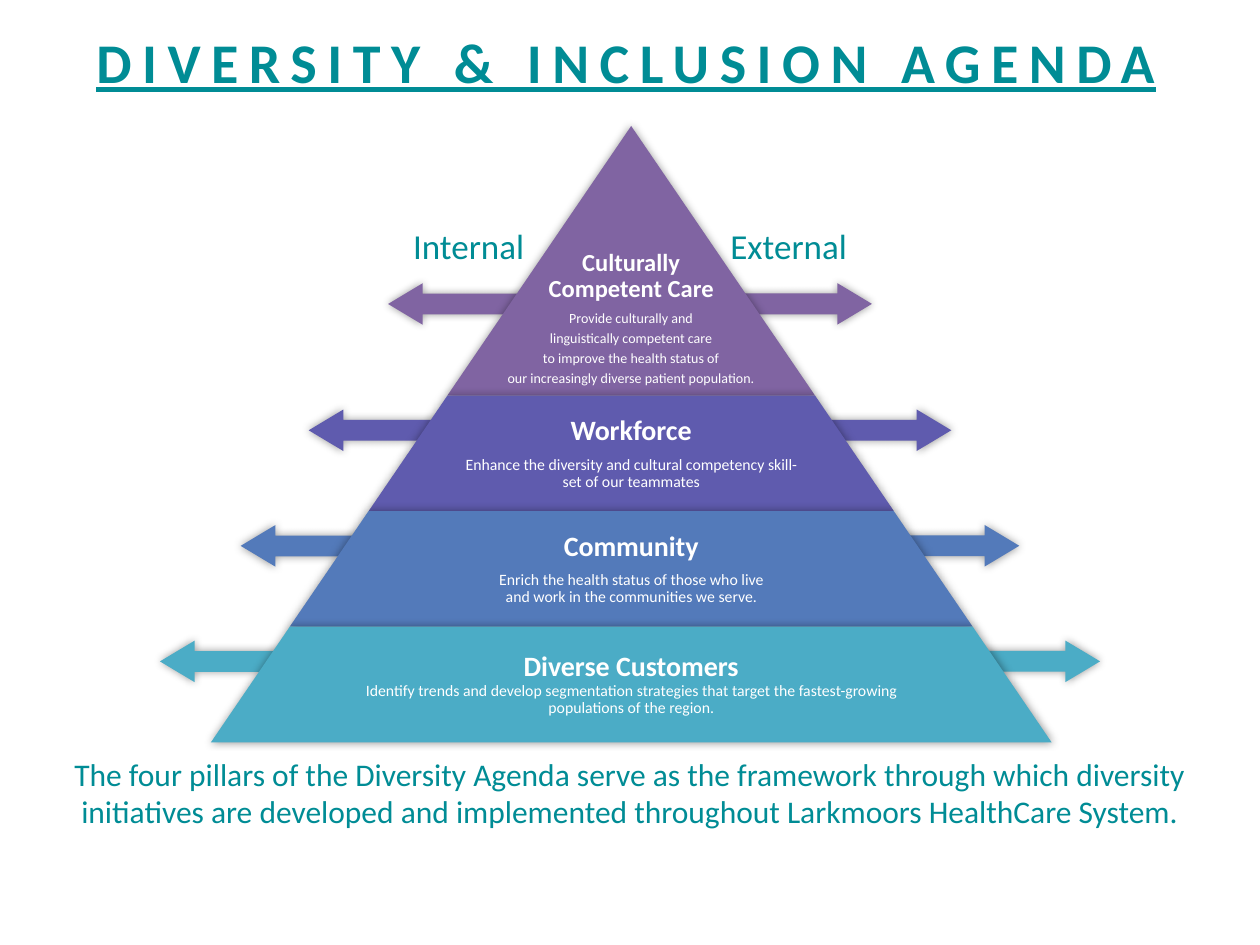
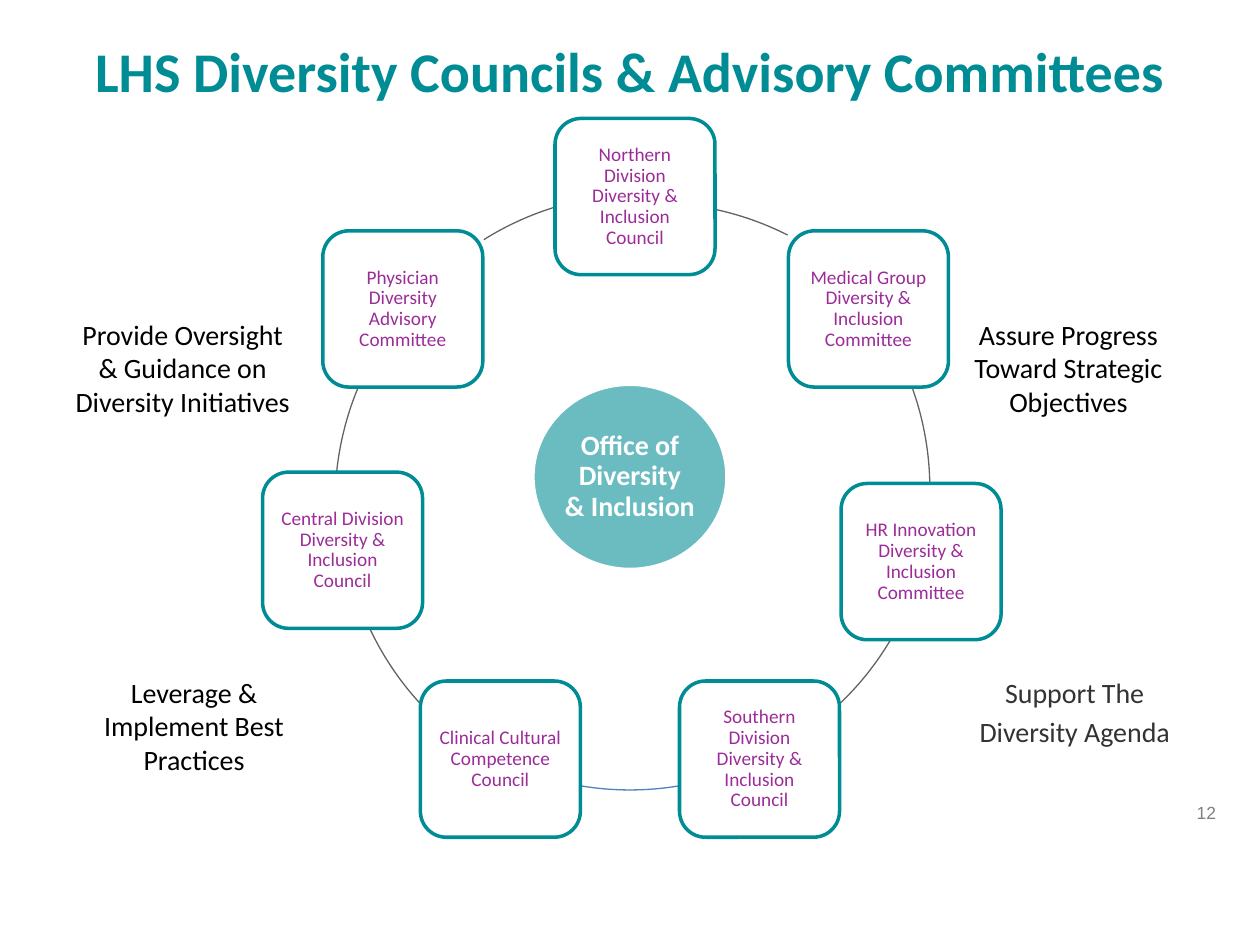
from copy import deepcopy
from dataclasses import dataclass
from math import cos, pi, sin

from lxml.etree import SubElement
from pptx import Presentation
from pptx.dml.color import RGBColor
from pptx.enum.shapes import MSO_SHAPE
from pptx.enum.text import MSO_ANCHOR, MSO_AUTO_SIZE, PP_ALIGN
from pptx.oxml.ns import qn
from pptx.util import Inches, Pt


@dataclass(frozen=True)
class Theme:
    font: str = "Calibri"
    number_font: str = "Arial"
    teal: str = "008C95"
    plum: str = "9B2C98"
    white: str = "FFFFFF"
    black: str = "000000"
    charcoal: str = "333333"
    gray: str = "808080"
    ring: str = "636363"
    ring_accent: str = "4F81BD"
    title: int = 32
    label: int = 20
    caption: int = 18
    heading: int = 16
    top_heading: int = 14
    card: int = 11
    detail: int = 9
    top_detail: int = 8
    number: int = 10


THEME = Theme()
WIDTH, HEIGHT = 10, 7.5
MIDDLE = WIDTH / 2

# Content: pyramid tiers, from the top down
# colour, height, arrow reach from the centre, arrow level as share of height,
# share of width for the text, heading, heading size, details, detail size
AGENDA_TITLE = "DIVERSITY & INCLUSION AGENDA"
LOW_TIER = 0.917
TIERS = [
    ("8064A2", 2.14, 1.92, 0.66, 1, "Culturally\nCompetent Care", THEME.top_heading,
     ["Provide culturally and", "linguistically competent care",
      "to improve the health status of",
      "our increasingly diverse patient population."], THEME.top_detail),
    ("5F5BAE", LOW_TIER, 2.55, 0.3, 0.65, "Workforce", THEME.heading,
     ["Enhance the diversity and cultural competency skill-set of our teammates"],
     THEME.detail),
    ("537ABA", LOW_TIER, 3.09, 0.3, 0.65, "Community", THEME.heading,
     ["Enrich the health status of those who live\nand work in the communities we serve."],
     THEME.detail),
    ("4BACC6", LOW_TIER, 3.73, 0.3, 0.65, "Diverse Customers", THEME.heading,
     ["Identify trends and develop segmentation strategies that target "
      "the fastest-growing populations of the region."], THEME.detail),
]
SIDES = [("Internal", -1), ("External", 1)]
CAPTION = ("The four pillars of the Diversity Agenda serve as the framework through which "
           "diversity\ninitiatives are developed and implemented throughout "
           "Larkmoors HealthCare System.")

# Content: councils clockwise from the top, with their shift from the even ring
COUNCIL_TITLE = "LHS Diversity Councils & Advisory Committees"
COUNCILS = [
    ("Northern Division Diversity & Inclusion Council", 0.04, 0.04),
    ("Medical Group Diversity & Inclusion Committee", 0.04, 0.04),
    ("HR Innovation Diversity & Inclusion Committee", 0, 0.04),
    ("Southern Division Diversity & Inclusion Council", 0, 0),
    ("Clinical Cultural Competence Council", 0, 0),
    ("Central Division Diversity & Inclusion Council", 0.03, -0.05),
    ("Physician Diversity Advisory Committee", 0.05, 0.04),
]
# Ring pieces: left, top, start and end angle, colour
ARCS = [
    (2.81, 1.61, 282.4, 296.9, THEME.ring),
    (2.64, 1.51, 340.3, 358.8, THEME.ring),
    (2.66, 1.5, 30.8, 46.2, THEME.ring),
    (2.63, 1.53, 80.7, 99.3, THEME.ring_accent),
    (2.71, 1.61, 137.6, 154.5, THEME.ring),
    (2.66, 1.62, 185.8, 202.6, THEME.ring),
    (2.73, 1.54, 237.9, 252.9, THEME.ring),
]
HUB = "Office of\nDiversity\n& Inclusion"
# Goals: left, top, height, colour, paragraphs
GOALS = [
    (0.57, 5.31, 0.91, THEME.black, ["Leverage & Implement Best Practices"]),
    (0.48, 2.47, 0.91, THEME.black,
     ["Provide Oversight", "& Guidance on Diversity Initiatives"]),
    (7.56, 5.31, 1.01, THEME.charcoal, ["Support The", "Diversity Agenda"]),
    (7.51, 2.47, 0.91, THEME.black, ["Assure Progress Toward Strategic Objectives"]),
]


# Text
def add_span(para, text, size, color, bold=False, underline=False, font=THEME.font):
    for index, line in enumerate(text.split("\n")):
        if index:
            para.add_line_break()
        span = para.add_run()
        span.text = line
        formats = {"name": font, "size": Pt(size), "bold": bold, "underline": underline}
        for name, value in formats.items():
            setattr(span.font, name, value)
        span.font.color.rgb = RGBColor.from_string(color)
    for line_break in para._p.findall(qn("a:br")):
        if len(line_break) == 0:
            line_break.append(deepcopy(span._r.rPr))
    return span


def set_frame(frame, inset=(0.1, 0.05, 0.1, 0.05), anchor=MSO_ANCHOR.TOP):
    left, top, right, bottom = map(Inches, inset)
    formats = {"word_wrap": True, "auto_size": MSO_AUTO_SIZE.NONE,
               "vertical_anchor": anchor, "margin_left": left, "margin_top": top,
               "margin_right": right, "margin_bottom": bottom}
    for name, value in formats.items():
        setattr(frame, name, value)


def add_para(frame, align=PP_ALIGN.CENTER, **spacing):
    para = frame.paragraphs[0]
    if para.runs:
        para = frame.add_paragraph()
    para.alignment = align
    for name, value in spacing.items():
        setattr(para, name, value)
    return para


def add_box(page, left, top, width, height, **frame_format):
    box = page.shapes.add_textbox(*map(Inches, (left, top, width, height)))
    set_frame(box.text_frame, **frame_format)
    return box.text_frame


def add_title_page(deck, text, place, anchor, underline=False):
    page = deck.slides.add_slide(deck.slide_layouts[5])
    title = page.shapes.title
    title.left, title.top, title.width, title.height = map(Inches, place)
    set_frame(title.text_frame, anchor=anchor)
    span = add_span(add_para(title.text_frame), text, THEME.title, THEME.teal,
                    bold=True, underline=underline)
    return page, span


# Shapes
def add_figure(page, kind, place, fill=None, line=None, line_width=2):
    shape = page.shapes.add_shape(kind, *map(Inches, place))
    shape.shadow.inherit = False
    if fill:
        shape.fill.solid()
        shape.fill.fore_color.rgb = RGBColor.from_string(fill)
    else:
        shape.fill.background()
    if line:
        shape.line.color.rgb = RGBColor.from_string(line)
        shape.line.width = Pt(line_width)
    else:
        shape.line.fill.background()
    return shape


def add_glow(shape):
    effects = shape._element.spPr.find(qn("a:effectLst"))
    shadow = SubElement(effects, qn("a:outerShdw"), blurRad=str(Pt(5)), dist="0", dir="0",
                        rotWithShape="0")
    color = SubElement(shadow, qn("a:srgbClr"), val=THEME.black)
    SubElement(color, qn("a:alpha"), val="40000")


# Slide 1: pyramid
def build_agenda(deck):
    page, span = add_title_page(deck, AGENDA_TITLE, (-0.14, 0.17, 10.22, 0.83),
                                MSO_ANCHOR.TOP, underline=True)
    span._r.rPr.set("spc", "600")
    apex, slope, arrow_height = 1, 0.682, 0.33

    tops = [apex + sum(tier[1] for tier in TIERS[:row]) for row in range(len(TIERS))]

    # Arrows to both sides
    for top, (color, height, reach, level, *_) in zip(tops, TIERS):
        length = 0.87 * reach
        for _, side in SIDES:
            center = MIDDLE + side * (reach - length / 2)
            arrow = add_figure(page, MSO_SHAPE.RIGHT_ARROW,
                               (center - length / 2, top + level * height - arrow_height / 2,
                                length, arrow_height), color)
            arrow.adjustments[1] = 0.833
            arrow.rotation = 0 if side > 0 else 180
            add_glow(arrow)

    # Side labels and caption
    for label, side in SIDES:
        frame = add_box(page, MIDDLE - 0.01 + side * 1.27 - 0.7, 1.73, 1.4, 0.44)
        add_span(add_para(frame), label, THEME.label, THEME.teal)
    caption = add_box(page, 0, 5.94, WIDTH, 0.71)
    add_span(add_para(caption), CAPTION, THEME.caption, THEME.teal)

    # Tiers with their text
    for top, tier in zip(tops, TIERS):
        color, height, _, _, share, heading, heading_size, details, detail_size = tier
        width = 2 * slope * (top + height - apex)
        band = add_figure(page, MSO_SHAPE.TRAPEZOID,
                          (MIDDLE + 0.01 - width / 2, top, width, height), color)
        band.adjustments[0] = slope
        add_glow(band)

        is_top, is_base = tier is TIERS[0], tier is TIERS[-1]
        text_width = share * width
        frame = add_box(page, MIDDLE + 0.01 - text_width / 2, top, text_width, height,
                        inset=(0.02, 0.02, 0.02, 0.07 if is_top else 0.02),
                        anchor=MSO_ANCHOR.BOTTOM if is_top else MSO_ANCHOR.MIDDLE)
        para = add_para(frame, line_spacing=0.9, space_after=Pt(0.35 * heading_size))
        add_span(para, heading, heading_size, THEME.white, bold=True)
        for detail in details:
            if is_base:
                para.add_line_break()
            else:
                para = add_para(frame, line_spacing=0.9, space_after=Pt(0.35 * detail_size))
            add_span(para, detail, detail_size, THEME.white)


# Slide 2: ring of councils
def build_councils(deck):
    page, _ = add_title_page(deck, COUNCIL_TITLE, (0.5, 0.18, 9, 0.75), MSO_ANCHOR.MIDDLE)
    ring_y, radius = 3.89, 2.37
    card_width, card_height = 1.27, 1.24

    # Ring pieces
    for left, top, start, end, color in ARCS:
        arc = add_figure(page, MSO_SHAPE.ARC, (left, top, 2 * radius, 2 * radius),
                         line=color, line_width=0.75)
        for index, angle in enumerate((start, end)):
            arc.adjustments[index] = angle * 0.6

    # Council cards
    for index, (name, shift_x, shift_y) in enumerate(COUNCILS):
        angle = 2 * pi * index / len(COUNCILS)
        left = MIDDLE + radius * sin(angle) + shift_x - card_width / 2
        top = ring_y - radius * cos(angle) + shift_y - card_height / 2
        card = add_figure(page, MSO_SHAPE.ROUNDED_RECTANGLE,
                          (left, top, card_width, card_height), line=THEME.teal)
        set_frame(card.text_frame, (0.05,) * 4, MSO_ANCHOR.MIDDLE)
        para = add_para(card.text_frame, line_spacing=0.9, space_after=Pt(0.35 * THEME.card))
        add_span(para, name, THEME.card, THEME.plum)

    # Office in the centre
    hub = add_figure(page, MSO_SHAPE.OVAL, (4.23, 3.05, 1.54, 1.47), THEME.teal, THEME.white)
    color = hub._element.spPr.find(qn("a:solidFill")).find(qn("a:srgbClr"))
    SubElement(color, qn("a:alpha"), val="58000")
    set_frame(hub.text_frame, (0,) * 4, MSO_ANCHOR.MIDDLE)
    para = add_para(hub.text_frame, line_spacing=0.9, space_after=Pt(0.35 * THEME.heading))
    add_span(para, HUB, THEME.heading, THEME.white, bold=True)

    # Goals around the ring
    for left, top, height, color, lines in GOALS:
        frame = add_box(page, left, top, 1.94, height)
        for index, line in enumerate(lines):
            gap = 0.2 * THEME.heading if index and color == THEME.charcoal else 0
            add_span(add_para(frame, space_before=Pt(gap)), line, THEME.heading, color)

    # Page number
    number = add_box(page, 8.58, 6.32, 1.17, 0.23)
    add_span(add_para(number, PP_ALIGN.RIGHT), "12", THEME.number, THEME.gray,
             font=THEME.number_font)


def main():
    deck = Presentation()
    deck.slide_width, deck.slide_height = Inches(WIDTH), Inches(HEIGHT)
    build_agenda(deck)
    build_councils(deck)
    deck.save("out.pptx")


if __name__ == "__main__":
    main()
